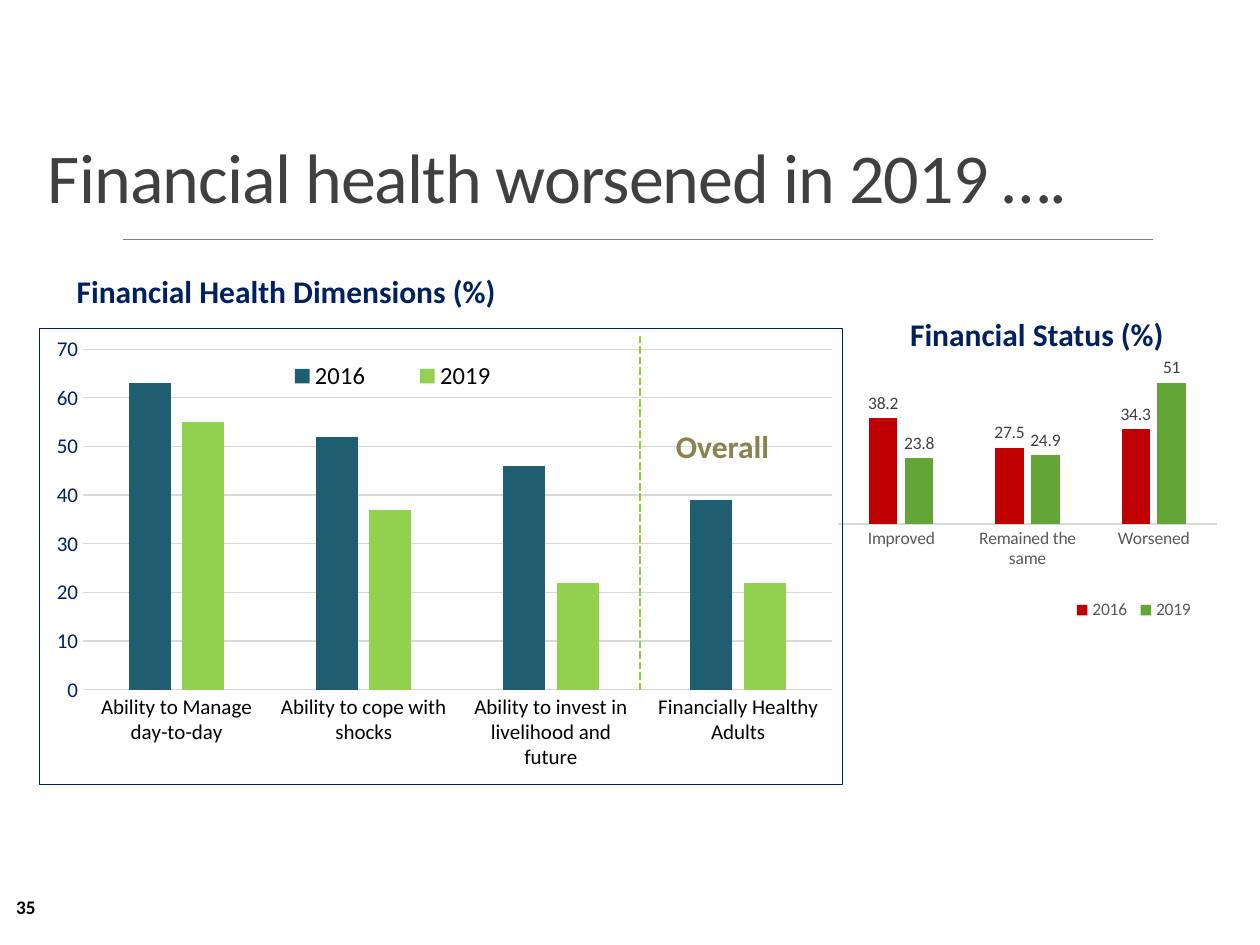
from lxml import etree
from pptx import Presentation, util as u
from pptx.chart.data import CategoryChartData
from pptx.dml.color import RGBColor
from pptx.enum import chart as ch, dml, shapes, text
from pptx.oxml import parse_xml
from pptx.oxml.ns import nsdecls, qn

COLORS = {
    "title": "404040", "rule": "808080", "navy": "002060", "black": "000000",
    "gray": "595959", "grid": "D9D9D9", "olive": "89814E", "divider": "99CB38",
    "teal": "1E5E70", "lime": "92D050", "red": "C00000", "green": "63A537",
}
FONT = "Calibri"
TITLE = "Financial health worsened in 2019 …."
LABELS = [
    ("35", (0.03, 7.06, 0.37, 0.4), 11, "black", text.PP_ALIGN.LEFT),
    ("Financial Status (%)", (6.85, 2.45, 2.76, 0.4), 18, "navy", text.PP_ALIGN.CENTER),
    ("Financial Health Dimensions (%)", (0.51, 2.11, 5.75, 0.4), 18, "navy", text.PP_ALIGN.LEFT),
    ("Overall", (5.05, 3.34, 1.37, 0.4), 18, "olive", text.PP_ALIGN.CENTER),
]
STATUS = {
    "box": (6.5, 2.65, 3.31, 2.52),
    "cats": ["Improved", "Remained the same", "Worsened"],
    "series": [("2016", [38.2, 27.5, 34.3], "red"), ("2019", [23.8, 24.9, 51], "green")],
    "plot": (0.046, 0.075, 0.908, 0.524), "legend": (0.6, 0.83, 0.31, 0.08),
    "cat_font": (10, "gray"), "legend_font": (10, "gray"), "max": 60, "labels": True,
}
DIMENSIONS = {
    "box": (0.31, 2.6, 6.38, 3.63),
    "cats": ["Ability to Manage day-to-day", "Ability to cope with shocks",
             "Ability to invest in livelihood and future", "Financially Healthy Adults"],
    "series": [("2016", [63, 52, 46, 39], "teal"), ("2019", [55, 37, 22, 22], "lime")],
    "plot": (0.054, 0.046, 0.933, 0.747), "legend": (0.26, 0.06, 0.36, 0.09),
    "cat_font": (12, "black"), "legend_font": (14, "black"), "max": 70, "labels": False,
}


def rgb(name):
    return RGBColor.from_string(COLORS[name])


def inches(box):
    return [u.Inches(v) for v in box]


def style(font, size, color, bold=False):
    for key, value in {"name": FONT, "size": u.Pt(size), "bold": bold}.items():
        setattr(font, key, value)
    font.color.rgb = rgb(color)


def line(s, start, end, color, width):
    c = s.shapes.add_connector(shapes.MSO_CONNECTOR.STRAIGHT, *inches(start + end))
    c.line.color.rgb = rgb(color)
    c.line.width = u.Pt(width)
    etree.SubElement(c._element.spPr, qn("a:effectLst"))
    return c


def place(parent, index, box, inner=False):
    for old in parent.findall(qn("c:layout")):
        parent.remove(old)
    layout = etree.Element(qn("c:layout"))
    manual = etree.SubElement(layout, qn("c:manualLayout"))
    items = [("layoutTarget", "inner")] if inner else []
    items += [("xMode", "edge"), ("yMode", "edge")] + list(zip("xywh", box))
    for tag, value in items:
        etree.SubElement(manual, qn("c:" + tag)).set("val", str(value))
    parent.insert(index, layout)


def add_chart(s, d):
    data = CategoryChartData()
    data.categories = d["cats"]
    for name, values, _ in d["series"]:
        data.add_series(name, values)
    chart = s.shapes.add_chart(
        ch.XL_CHART_TYPE.COLUMN_CLUSTERED, *inches(d["box"]), data).chart
    style(chart.font, 10, "black")
    chart.has_title = False
    plot = chart.plots[0]
    for key, value in {"gap_width": 219, "overlap": -27, "vary_by_categories": False}.items():
        setattr(plot, key, value)
    for series, (_, _, color) in zip(plot.series, d["series"]):
        series.format.fill.solid()
        series.format.fill.fore_color.rgb = rgb(color)
        if d["labels"]:
            labels = series.data_labels
            labels.show_value = True
            labels.position = ch.XL_LABEL_POSITION.OUTSIDE_END
            style(labels.font, 10, "title")
    cat, val = chart.category_axis, chart.value_axis
    for axis in (cat, val):
        axis.major_tick_mark = axis.minor_tick_mark = ch.XL_TICK_MARK.NONE
    style(cat.tick_labels.font, *d["cat_font"])
    cat.format.line.color.rgb = rgb("grid")
    cat.format.line.width = u.Pt(0.75)
    val.minimum_scale, val.maximum_scale = 0, d["max"]
    val.major_unit = 10
    val.has_major_gridlines = False
    chart.has_legend = True
    chart.legend.position = ch.XL_LEGEND_POSITION.BOTTOM
    chart.legend.include_in_layout = False
    style(chart.legend.font, *d["legend_font"])
    place(chart.legend._element, 1, d["legend"])
    place(chart._chartSpace.chart.plotArea, 0, d["plot"], inner=True)
    return chart


def main():
    prs = Presentation()
    prs.slide_width, prs.slide_height = u.Inches(10), u.Inches(7.5)
    s = prs.slides.add_slide(prs.slide_layouts[5])
    line(s, (0.98, 1.9), (9.15, 1.9), "rule", 0.5)

    title = s.shapes.title
    title.left, title.top, title.width, title.height = inches((0.28, 0.68, 9.29, 1.1))
    tf = title.text_frame
    tf.text = TITLE
    tf.vertical_anchor = text.MSO_ANCHOR.BOTTOM
    tf.auto_size = text.MSO_AUTO_SIZE.NONE
    p = tf.paragraphs[0]
    p.alignment = text.PP_ALIGN.LEFT
    p.line_spacing = 0.85
    style(p.runs[0].font, 40, "title")
    p.runs[0].font._element.set("spc", "-50")

    status = add_chart(s, STATUS)
    status.value_axis.visible = False

    dimensions = add_chart(s, DIMENSIONS)
    val = dimensions.value_axis
    val.has_major_gridlines = True
    grid = val.major_gridlines.format.line
    grid.color.rgb = rgb("grid")
    grid.width = u.Pt(0.75)
    val.format.line.fill.background()
    style(val.tick_labels.font, 12, "navy")
    dimensions._chartSpace.chart.addnext(parse_xml(
        f'<c:spPr {nsdecls("c", "a")}><a:noFill/><a:ln w="9525"><a:solidFill>'
        f'<a:srgbClr val="{COLORS["navy"]}"/></a:solidFill></a:ln></c:spPr>'))

    divider = line(s, (5.08, 5.48), (5.08, 2.65), "divider", 1.5)
    divider.line.dash_style = dml.MSO_LINE.SQUARE_DOT

    for words, box, size, color, align in LABELS:
        tf = s.shapes.add_textbox(*inches(box)).text_frame
        tf.word_wrap = True
        p = tf.paragraphs[0]
        p.alignment = align
        r = p.add_run()
        r.text = words
        style(r.font, size, color, bold=True)

    prs.save("out.pptx")


if __name__ == "__main__":
    main()
